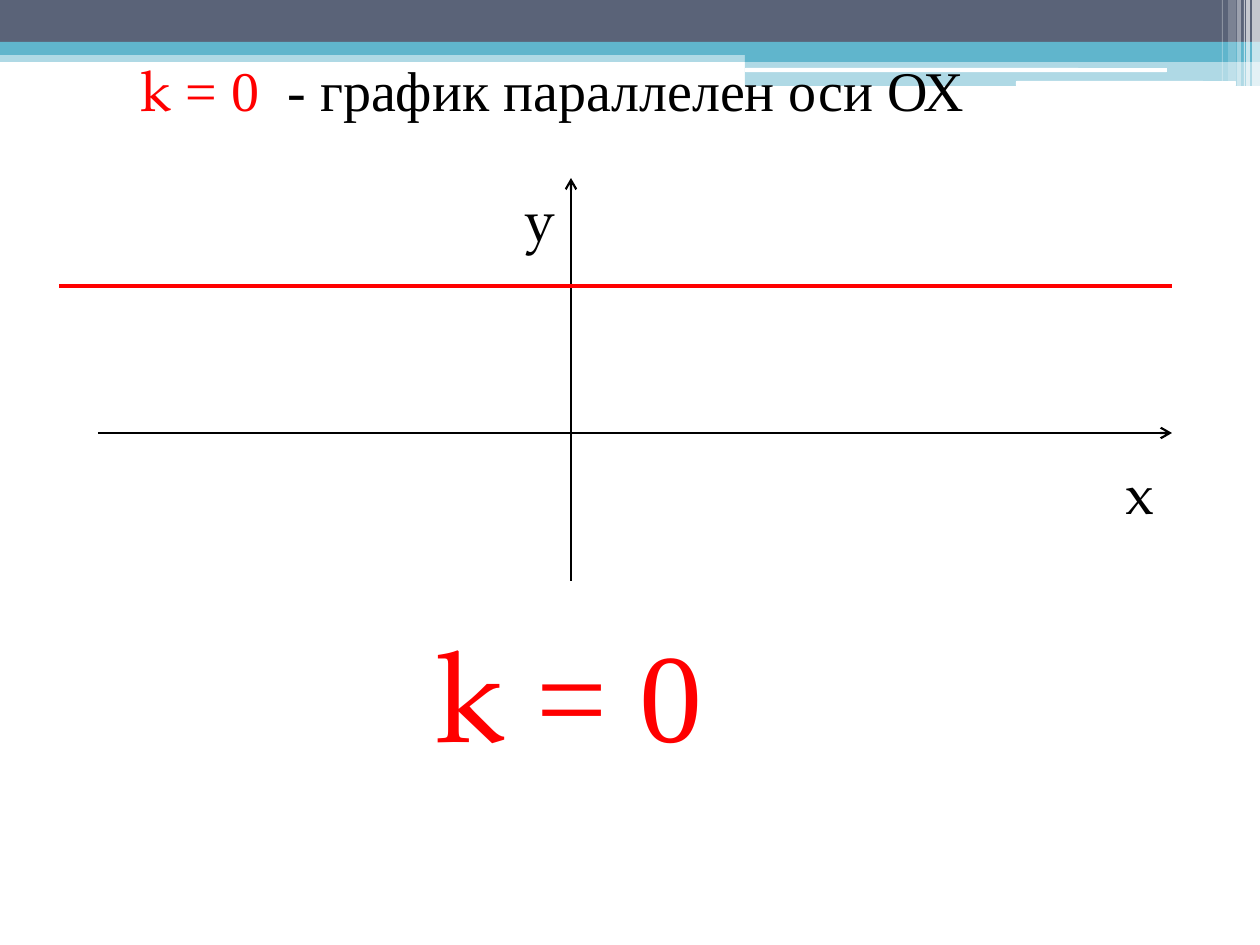
from lxml import etree
from pptx import Presentation
from pptx.dml.color import RGBColor
from pptx.enum.shapes import MSO_CONNECTOR, MSO_SHAPE
from pptx.enum.text import MSO_ANCHOR, PP_ALIGN
from pptx.oxml.ns import qn
from pptx.util import Pt

PX = 914400 / 126
RECT, ROUND = MSO_SHAPE.RECTANGLE, MSO_SHAPE.ROUNDED_RECTANGLE
LINE = MSO_CONNECTOR.STRAIGHT
LEFT, TOP = PP_ALIGN.LEFT, MSO_ANCHOR.TOP
SLATE = RGBColor(0x5A, 0x63, 0x78)
TEAL = RGBColor(0x60, 0xB5, 0xCC)
WHITE = RGBColor(0xFF, 0xFF, 0xFF)
BLACK = RGBColor(0, 0, 0)
RED = RGBColor(0xFF, 0, 0)
SERIF, ROMAN = "TeX Gyre Pagella", "Times New Roman"

# kind, (left, top, width, height), colour, opacity in percent
BANDS = [
    (RECT, (0, 50, 1260, 12), TEAL, 50),
    (RECT, (0, 0, 1260, 43), SLATE, 100),
    (RECT, (0, 42, 1260, 13), TEAL, 100),
    (RECT, (745, 49, 515, 13), TEAL, 100),
    (RECT, (745, 61, 515, 25), TEAL, 50),
    (ROUND, (745, 68, 422, 4), WHITE, 100),
    (ROUND, (1016, 81, 220, 5), WHITE, 100),
]
# left, width, height, opacity
STRIPES = [
    (1252, 8, 86, 65), (1246, 4, 86, 65), (1244, 1, 86, 60),
    (1237, 4, 86, 40), (1228, 8, 81, 20), (1222, 1, 81, 30),
]
BANDS += [(RECT, (x, 0, w, h), WHITE, a) for x, w, h, a in STRIPES]

# start, end, colour, width in points, arrow at the end
LINES = [
    ((571, 581), (571, 178), BLACK, 1.25, True),
    ((98, 433), (1172, 433), BLACK, 1.25, True),
    ((1172, 286), (59, 286), RED, 2, False),
]

# text, font, colour
HEAD = [("k ", SERIF, RED), ("= 0  ", ROMAN, RED),
        ("- график параллелен оси ОХ", ROMAN, BLACK)]
HEAD_BOX = (128, 49, 965, 81)
# box, size in points, runs
LABELS = [
    ((1113, 452, 53, 81), 32, [("x", SERIF, BLACK)]),
    ((512, 178, 53, 81), 32, [("y", SERIF, BLACK)]),
    ((423, 610, 324, 165), 72, [("k ", SERIF, RED), ("= 0", ROMAN, RED)]),
]


def emu(nums):
    return [round(n * PX) for n in nums]


def add_band(slide, kind, box, color, alpha):
    band = slide.shapes.add_shape(kind, *emu(box))
    band.shadow.inherit = False
    band.fill.solid()
    band.fill.fore_color.rgb = color
    band.line.fill.background()
    if alpha < 100:
        node = band.fill._xPr.find(qn("a:solidFill"))[0]
        etree.SubElement(node, qn("a:alpha"), val=str(alpha * 1000))


def add_line(slide, start, end, color, width, arrow):
    line = slide.shapes.add_connector(LINE, *emu(start + end))
    line.line.color.rgb = color
    line.line.width = Pt(width)
    if arrow:
        etree.SubElement(line.line._get_or_add_ln(), qn("a:tailEnd"), type="arrow")
    etree.SubElement(line._element.spPr, qn("a:effectLst"))


def write(shape, size, runs, wrap):
    frame = shape.text_frame
    frame.word_wrap = wrap
    frame.vertical_anchor = TOP
    para = frame.paragraphs[0]
    para.alignment = LEFT
    for text, font, color in runs:
        run = para.add_run()
        run.text = text
        run.font.name = font
        run.font.size = Pt(size)
        run.font.color.rgb = color


def main():
    prs = Presentation()
    prs.slide_width, prs.slide_height = emu((1260, 945))
    slide = prs.slides.add_slide(prs.slide_layouts[5])
    title = slide.shapes.title

    for band in BANDS:
        add_band(slide, *band)

    title.left, title.top, title.width, title.height = emu(HEAD_BOX)
    write(title, 32, HEAD, True)
    slide.shapes._spTree.append(title._element)  # in front of the bands

    for line in LINES:
        add_line(slide, *line)
    for box, size, runs in LABELS:
        write(slide.shapes.add_textbox(*emu(box)), size, runs, False)

    prs.save("out.pptx")


if __name__ == "__main__":
    main()
